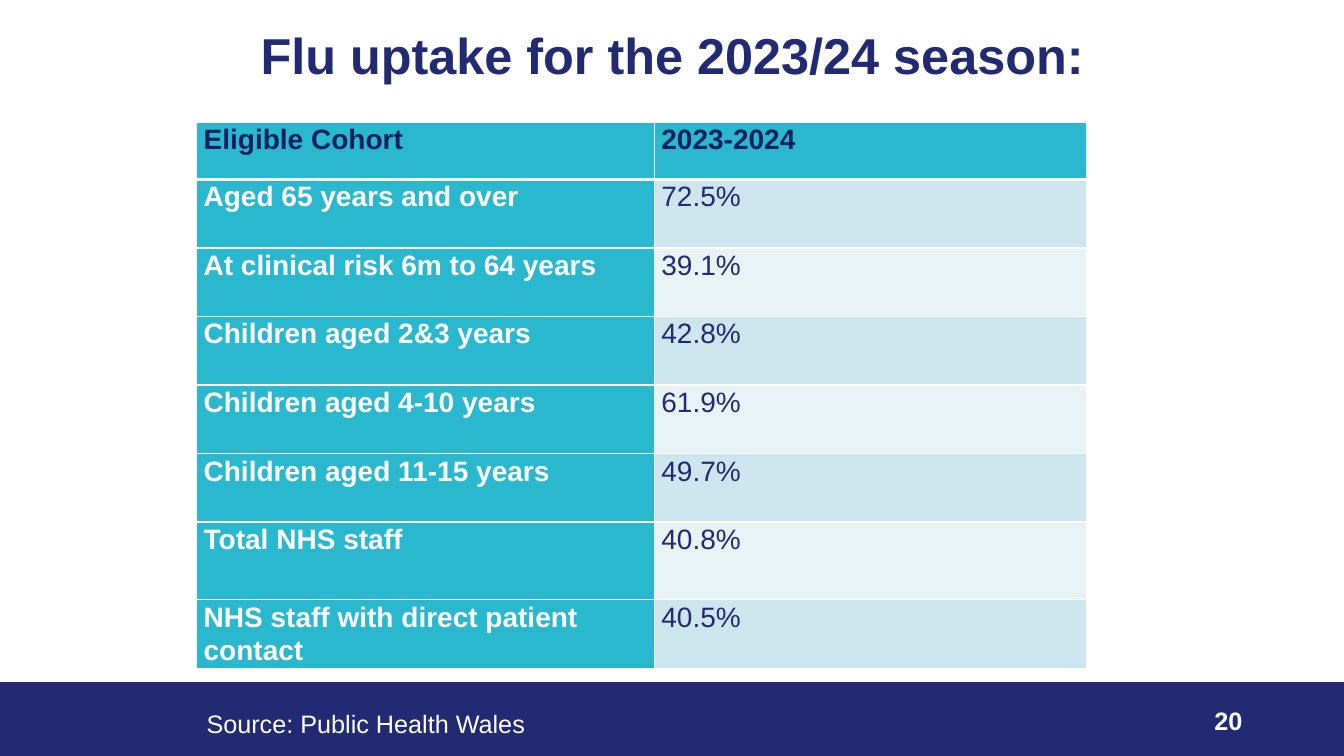
from lxml import etree
from pptx import Presentation
from pptx.dml.color import RGBColor
from pptx.enum.shapes import MSO_SHAPE as Shape
from pptx.enum.text import MSO_ANCHOR as Anchor, PP_ALIGN as Align
from pptx.oxml.ns import qn
from pptx.util import Inches, Pt

COLORS = {
    "navy": "212A73",
    "header_text": "002060",
    "teal": "29B8CE",
    "band_dark": "CDE6ED",
    "band_light": "E8F3F6",
    "white": "FFFFFF",
}
FONT = "Arial"
HEADER = ("Eligible Cohort", "2023-2024")
UPTAKE = [
    ("Aged 65 years and over", "72.5%"),
    ("At clinical risk 6m to 64 years", "39.1%"),
    ("Children aged 2&3 years", "42.8%"),
    ("Children aged 4-10 years", "61.9%"),
    ("Children aged 11-15 years", "49.7%"),
    ("Total NHS staff", "40.8%"),
    ("NHS staff with direct patient contact", "40.5%"),
]
COLUMN_WIDTHS = (4.54, 4.29)
ROW_HEIGHTS = (0.57, 0.68, 0.68, 0.68, 0.68, 0.68, 0.77, 0.68)


def color(name):
    return RGBColor.from_string(COLORS[name])


def style(paragraph, size, color_name, bold=False, align=Align.LEFT):
    paragraph.alignment = align
    font = paragraph.font
    font.name, font.size, font.bold = FONT, Pt(size), bold
    font.color.rgb = color(color_name)


def add_title(slide, text):
    title = slide.shapes.title
    title.left, title.top = Inches(0.92), Inches(0.21)
    title.width, title.height = Inches(11.5), Inches(0.72)
    frame = title.text_frame
    frame.text = text
    frame.vertical_anchor = Anchor.TOP
    frame.margin_top = Inches(0.1)
    heading = frame.paragraphs[0]
    heading.line_spacing = 0.9
    style(heading, 36, "navy", bold=True, align=Align.CENTER)


def add_footer_band(slide):
    band = slide.shapes.add_shape(
        Shape.RECTANGLE, Inches(0), Inches(6.77), Inches(13.33), Inches(0.73))
    band.shadow.inherit = False
    band.fill.solid()
    band.fill.fore_color.rgb = color("navy")
    band.line.color.rgb = color("navy")
    band.line.width = Pt(1)


def add_footer_text(slide, text, left, top, width, bold=False, align=Align.LEFT):
    box = slide.shapes.add_textbox(
        Inches(left), Inches(top), Inches(width), Inches(0.4))
    frame = box.text_frame
    frame.word_wrap = True
    frame.text = text
    style(frame.paragraphs[0], 18, "white", bold, align)


def add_borders(cell, top=1, bottom=1):
    properties = cell._tc.get_or_add_tcPr()
    for side, points in (("L", 1), ("R", 1), ("T", top), ("B", bottom)):
        line = etree.SubElement(properties, qn(f"a:ln{side}"), w=str(Pt(points)))
        fill = etree.SubElement(line, qn("a:solidFill"))
        etree.SubElement(fill, qn("a:srgbClr"), val=COLORS["white"])


def fill_cell(cell, text, fill_name, text_color, bold, top=1, bottom=1):
    add_borders(cell, top, bottom)
    cell.fill.solid()
    cell.fill.fore_color.rgb = color(fill_name)
    cell.margin_left = cell.margin_right = Inches(0.07)
    cell.margin_top = cell.margin_bottom = Inches(0)
    cell.text = text
    entry = cell.text_frame.paragraphs[0]
    entry.line_spacing = 1.07
    entry.space_after = Pt(8)
    style(entry, 20, text_color, bold)


def add_uptake_table(slide):
    table = slide.shapes.add_table(
        len(ROW_HEIGHTS), len(COLUMN_WIDTHS), Inches(1.95), Inches(1.21),
        Inches(sum(COLUMN_WIDTHS)), Inches(sum(ROW_HEIGHTS))).table
    for column, width in zip(table.columns, COLUMN_WIDTHS):
        column.width = Inches(width)
    for row, height in zip(table.rows, ROW_HEIGHTS):
        row.height = Inches(height)

    for index, heading in enumerate(HEADER):
        fill_cell(table.cell(0, index), heading, "teal", "header_text", True, bottom=3)
    for index, (cohort, rate) in enumerate(UPTAKE, start=1):
        top = 3 if index == 1 else 1
        band = "band_dark" if index % 2 else "band_light"
        fill_cell(table.cell(index, 0), cohort, "teal", "white", True, top)
        fill_cell(table.cell(index, 1), rate, band, "navy", False, top)


def main():
    deck = Presentation()
    deck.slide_width, deck.slide_height = Inches(13.33), Inches(7.5)
    slide = deck.slides.add_slide(deck.slide_layouts[5])

    # Heading and figures
    add_title(slide, "Flu uptake for the 2023/24 season:")
    add_uptake_table(slide)

    # Footer
    add_footer_band(slide)
    add_footer_text(slide, "20", 9.42, 6.95, 3, bold=True, align=Align.RIGHT)
    add_footer_text(slide, "Source: Public Health Wales", 1.95, 6.98, 3.39)

    deck.save("out.pptx")


if __name__ == "__main__":
    main()
